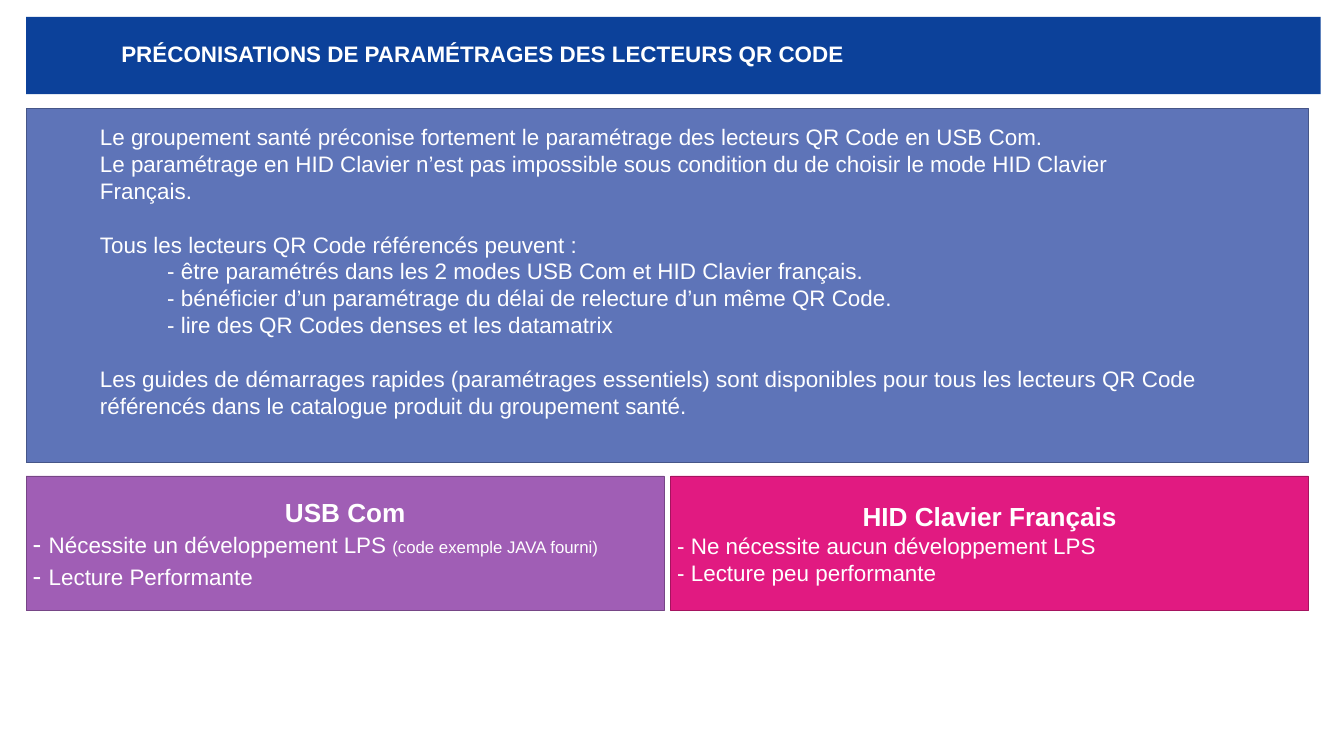
from pptx import Presentation
from pptx.dml.color import RGBColor
from pptx.enum import shapes, text
from pptx.util import Pt

WHITE = RGBColor(0xFF, 0xFF, 0xFF)
NAVY = RGBColor(0x0C, 0x41, 0x9A)
BLUE, BLUE_EDGE = RGBColor(0x5E, 0x74, 0xB8), RGBColor(0x46, 0x56, 0x88)
PURPLE, PURPLE_EDGE = RGBColor(0xA0, 0x5E, 0xB5), RGBColor(0x76, 0x46, 0x86)
PINK, PINK_EDGE = RGBColor(0xE1, 0x1A, 0x81), RGBColor(0xA6, 0x13, 0x5F)

TITLE = "PRÉCONISATIONS DE PARAMÉTRAGES DES LECTEURS QR CODE"
# (text, indent level, space before); \v is a line break
ADVICE = [
    ("Le groupement santé préconise fortement le paramétrage des lecteurs QR Code en USB Com.", 1, 0),
    ("Le paramétrage en HID Clavier n’est pas impossible sous condition du de choisir "
     "le mode HID Clavier\vFrançais.", 1, 0),
    ("Tous les lecteurs QR Code référencés peuvent :", 1, 28.8),
    ("- être paramétrés dans les 2 modes USB Com et HID Clavier français.", 2, 0),
    ("- bénéficier d’un paramétrage du délai de relecture d’un même QR Code.", 2, 0),
    ("- lire des QR Codes denses et les datamatrix", 2, 0),
    ("Les guides de démarrages rapides (paramétrages essentiels) sont disponibles "
     "pour tous les lecteurs QR Code\vréférencés dans le catalogue produit du groupement santé.", 1, 28.8),
]
# Each mode: heading, then points made of (text, size) pieces
MODES = [
    ("USB Com", PURPLE, PURPLE_EDGE, [
        [("- ", 28), ("Nécessite un développement LPS ", 24), ("(code exemple JAVA fourni)", 18)],
        [("- ", 28), ("Lecture Performante", 24)],
    ]),
    ("HID Clavier Français", PINK, PINK_EDGE, [
        [("- Ne nécessite aucun développement LPS", 24)],
        [("- Lecture peu performante", 24)],
    ]),
]

LEFT, WIDTH, GAP = 28, 1374, 7
INDENT = 72


def add_panel(slide, left, top, width, height, fill, edge=None):
    panel = slide.shapes.add_shape(shapes.MSO_SHAPE.RECTANGLE,
                                   Pt(left), Pt(top), Pt(width), Pt(height))
    panel.shadow.inherit = False
    panel.fill.solid()
    panel.fill.fore_color.rgb = fill
    if edge is None:
        panel.line.fill.background()
    else:
        panel.line.color.rgb = edge
        panel.line.width = Pt(1)
    frame = panel.text_frame
    frame.word_wrap = True
    frame.vertical_anchor = text.MSO_ANCHOR.MIDDLE
    return frame


def add_text(frame, pieces, first=False, bold=False, centred=False, indent=0, before=0):
    """Write one paragraph from (text, size) pieces."""
    paragraph = frame.paragraphs[0] if first else frame.add_paragraph()
    paragraph.alignment = text.PP_ALIGN.CENTER if centred else text.PP_ALIGN.LEFT
    paragraph.space_before = Pt(before)
    if indent:
        paragraph._p.get_or_add_pPr().set("marL", str(Pt(indent)))
    for words, size in pieces:
        for number, line in enumerate(words.split("\v")):
            if number:
                paragraph.add_line_break()
            run = paragraph.add_run()
            run.text = line
            run.font.name = "Arial"
            run.font.size = Pt(size)
            run.font.bold = bold
            run.font.color.rgb = WHITE
    return paragraph


def main():
    deck = Presentation()
    deck.slide_width, deck.slide_height = Pt(1440), Pt(810)
    slide = deck.slides.add_slide(deck.slide_layouts[6])

    title = add_panel(slide, LEFT, 18, 1387, 83, NAVY)
    title.margin_left = Pt(102)
    add_text(title, [(TITLE, 24)], first=True, bold=True).line_spacing = 0.9

    advice = add_panel(slide, LEFT, 116, WIDTH, 380, BLUE, BLUE_EDGE)
    advice.vertical_anchor = text.MSO_ANCHOR.TOP
    advice.margin_top = Pt(16)
    for number, (words, level, before) in enumerate(ADVICE):
        add_text(advice, [(words, 24)], first=number == 0,
                 indent=level * INDENT, before=before)

    mode_width = (WIDTH - GAP) / 2
    for column, (heading, fill, edge, points) in enumerate(MODES):
        mode = add_panel(slide, LEFT + column * (mode_width + GAP), 510,
                         mode_width, 144.5, fill, edge)
        add_text(mode, [(heading, 28)], first=True, bold=True, centred=True)
        for point in points:
            add_text(mode, point)

    deck.save("out.pptx")


if __name__ == "__main__":
    main()
